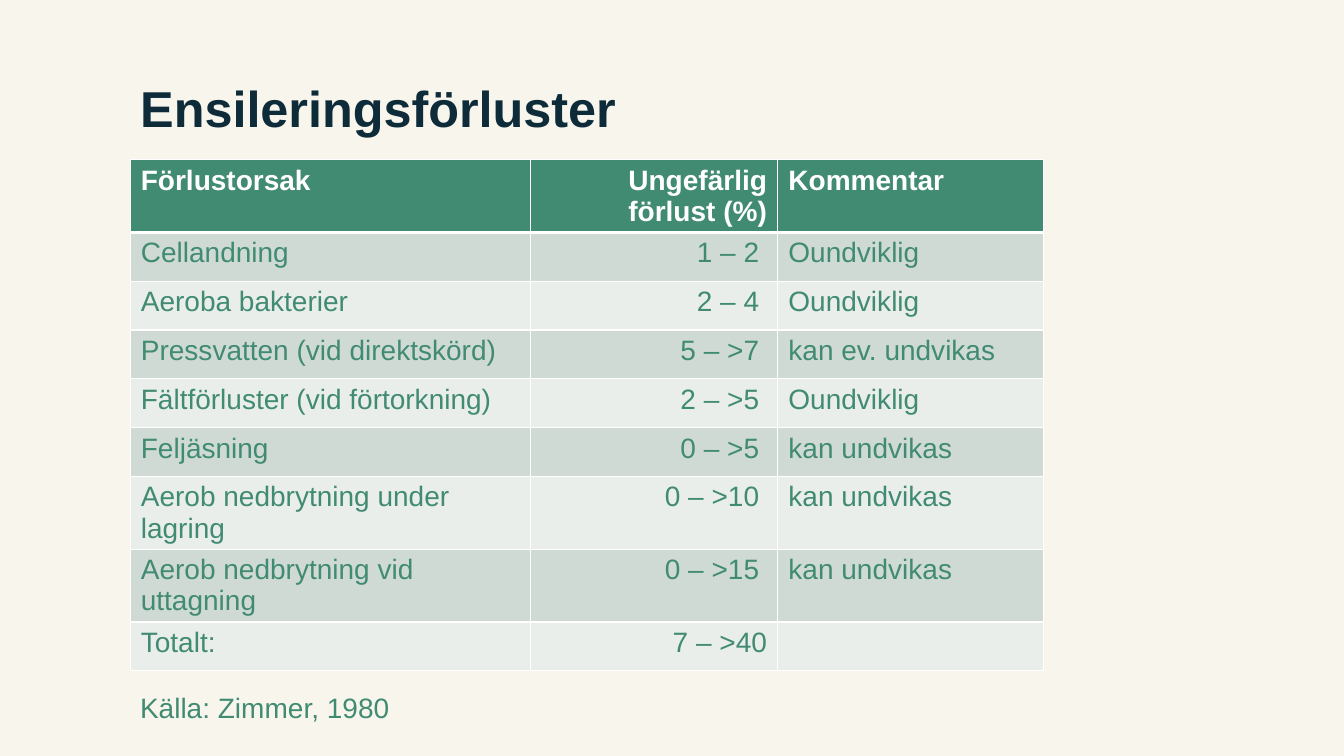
from lxml.etree import SubElement
from pptx import Presentation
from pptx.dml.color import RGBColor
from pptx.enum.text import MSO_ANCHOR, MSO_AUTO_SIZE, PP_ALIGN
from pptx.oxml.ns import qn
from pptx.util import Cm, Pt

GREEN, WHITE, NAVY, CREAM = "418B73", "FFFFFF", "0D2B38", "F8F5ED"
BANDS = "E9EEEB", "CFDAD5"
WIDTHS = 10.09, 6.23, 6.69
ROW = 1.23
LOSSES = [
    ("Förlustorsak", "Ungefärlig förlust (%)", "Kommentar"),
    ("Cellandning", "1 – 2 ", "Oundviklig"),
    ("Aeroba bakterier", "2 – 4 ", "Oundviklig"),
    ("Pressvatten (vid direktskörd)", "5 – >7 ", "kan ev. undvikas"),
    ("Fältförluster (vid förtorkning)", "2 – >5 ", "Oundviklig"),
    ("Feljäsning", "0 – >5 ", "kan undvikas"),
    ("Aerob nedbrytning under lagring", "0 – >10 ", "kan undvikas"),
    ("Aerob nedbrytning vid uttagning", "0 – >15 ", "kan undvikas"),
    ("Totalt:", "7 – >40", ""),
]


def paint(target, tone):
    target.solid()
    target.fore_color.rgb = RGBColor.from_string(tone)


def style(par, size, tone, bold=False):
    font = par.font
    font.name, font.size, font.bold = "Arial", Pt(size), bold
    font.color.rgb = RGBColor.from_string(tone)


def edge(cell, side, width):
    line = SubElement(cell._tc.get_or_add_tcPr(), qn(f"a:ln{side}"), w=str(Pt(width)))
    fill = SubElement(line, qn("a:solidFill"))
    SubElement(fill, qn("a:srgbClr"), val=WHITE)


def add_title(slide, left, top, width, height):
    title = slide.shapes.title
    title.left, title.top = Cm(left), Cm(top)
    title.width, title.height = Cm(width), Cm(height)
    frame = title.text_frame
    frame.text = "Ensileringsförluster"
    frame.auto_size = MSO_AUTO_SIZE.NONE
    frame.vertical_anchor = MSO_ANCHOR.BOTTOM
    par = frame.paragraphs[0]
    par.alignment, par.line_spacing = PP_ALIGN.LEFT, 0.9
    style(par, 36, NAVY, True)


def fill_cell(cell, text, row, col):
    head = row == 0
    cell.margin_left = cell.margin_right = Cm(0.27)
    cell.margin_top = cell.margin_bottom = Cm(0.13)
    for side, width in zip("LRTB", (1, 1, 3 if row == 1 else 1, 3 if head else 1)):
        edge(cell, side, width)
    paint(cell.fill, GREEN if head else BANDS[row % 2])
    cell.text = text
    par = cell.text_frame.paragraphs[0]
    par.alignment = PP_ALIGN.RIGHT if col == 1 else PP_ALIGN.LEFT
    style(par, 20, WHITE if head else GREEN, head)


def add_losses(slide, left, top, width):
    frame = slide.shapes.add_table(len(LOSSES), len(WIDTHS), Cm(left), Cm(top),
                                   Cm(width), Cm(ROW * len(LOSSES)))
    table = frame.table
    for col, size in zip(table.columns, WIDTHS):
        col.width = Cm(size)
    for row, texts in enumerate(LOSSES):
        for col, text in enumerate(texts):
            fill_cell(table.cell(row, col), text, row, col)


def add_source(slide, left, top, width, height):
    box = slide.shapes.add_textbox(Cm(left), Cm(top), Cm(width), Cm(height))
    frame = box.text_frame
    frame.word_wrap = False
    frame.auto_size = MSO_AUTO_SIZE.SHAPE_TO_FIT_TEXT
    frame.vertical_anchor = MSO_ANCHOR.MIDDLE
    frame.margin_bottom = 0
    frame.text = "Källa: Zimmer, 1980"
    style(frame.paragraphs[0], 20, GREEN)


def main():
    deck = Presentation()
    deck.slide_width, deck.slide_height = Cm(33.87), Cm(19.05)
    slide = deck.slides.add_slide(deck.slide_layouts[5])
    paint(slide.background.fill, CREAM)
    left, width = 3.28, sum(WIDTHS)
    add_title(slide, left, 1.3, width, 2.31)
    add_losses(slide, left, 4.02, width)
    add_source(slide, left, 17.27, 6.86, 0.99)
    deck.save("out.pptx")


if __name__ == "__main__":
    main()
